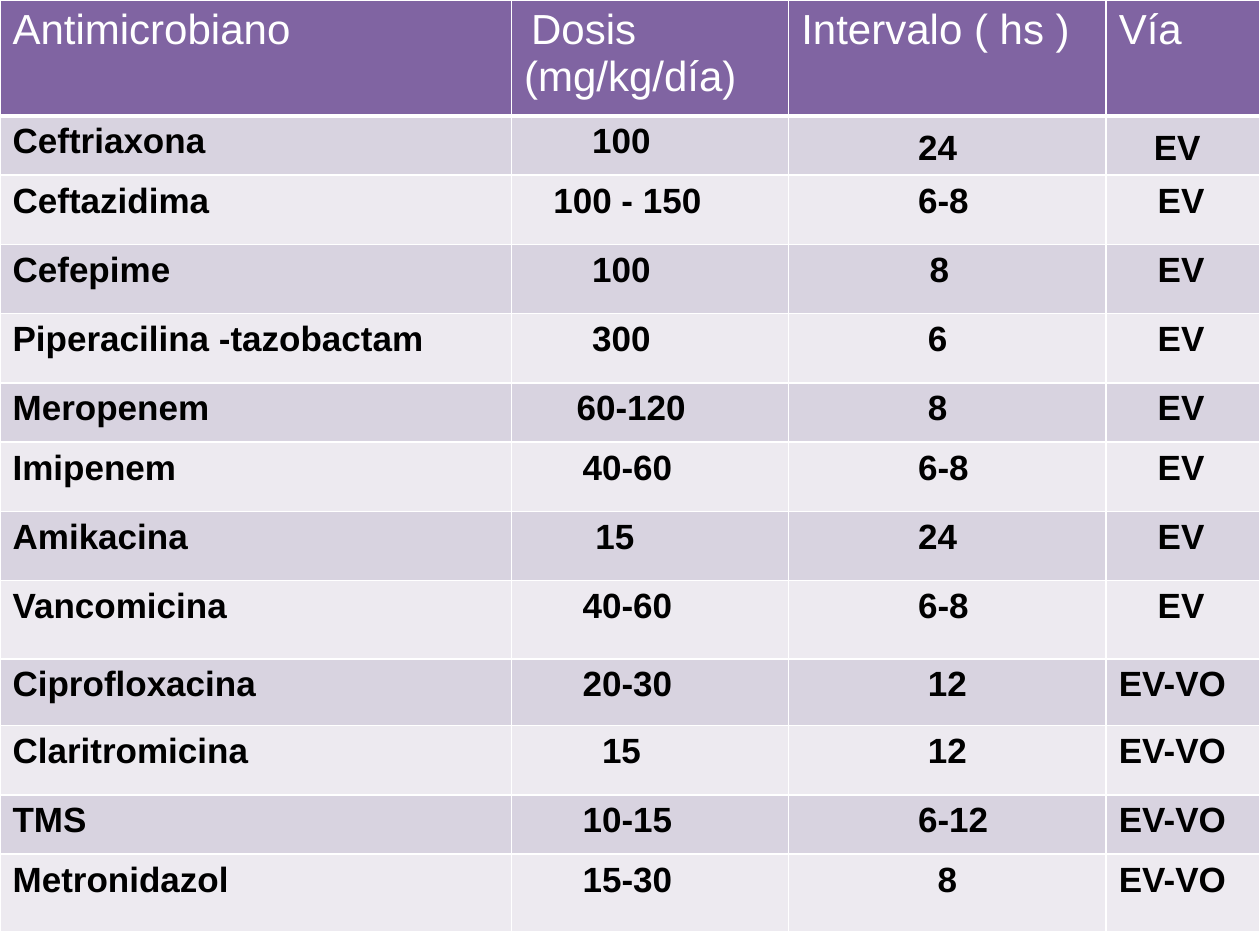
from dataclasses import dataclass

from lxml import etree
from pptx import Presentation
from pptx import util as u
from pptx.dml.color import RGBColor
from pptx.oxml import ns


@dataclass(frozen=True)
class Theme:
    font: str = "Arial"
    head_size: float = 24
    body_size: float = 20
    white: str = "FFFFFF"
    black: str = "000000"
    head_fill: str = "8064A2"
    bands: tuple = ("D8D3E0", "EDEAF0")
    line: float = 1
    head_line: float = 3


@dataclass(frozen=True)
class Entry:
    """Text of a cell, with its indent and extra top margin in points."""
    text: str
    indent: float = 0
    drop: float = 0


@dataclass(frozen=True)
class Drug:
    name: str
    dose: Entry
    interval: Entry
    route: Entry
    height: float


T = Theme()
MARGIN_TOP = 3.6
COLUMNS = (292.32, 158.4, 181.44, 87.84)
HEAD_HEIGHT = 66.24
SHORT, TALL, LAST = 33.84, 39.6, 44.64

HEADS = (
    (Entry("Antimicrobiano"),),
    (Entry("Dosis", 4), Entry("(mg/kg/día)")),
    (Entry("Intervalo ( hs )"),),
    (Entry("Vía"),),
)

EV = Entry("EV", 22.2)
EV_VO = Entry("EV-VO")
DRUGS = (
    Drug("Ceftriaxona", Entry("100", 38.9), Entry("24", 66.7, 3.6), Entry("EV", 20, 3.6), SHORT),
    Drug("Ceftazidima", Entry("100 - 150", 16.7), Entry("6-8", 66.7), EV, TALL),
    Drug("Cefepime", Entry("100", 38.9), Entry("8", 73.3), EV, TALL),
    Drug("Piperacilina -tazobactam", Entry("300", 38.9), Entry("6", 72.3), EV, TALL),
    Drug("Meropenem", Entry("60-120", 30), Entry("8", 72.3), EV, SHORT),
    Drug("Imipenem", Entry("40-60", 33.4), Entry("6-8", 66.7), EV, TALL),
    Drug("Amikacina", Entry("15", 40.7), Entry("24", 66.7), EV, TALL),
    Drug("Vancomicina", Entry("40-60", 33.4), Entry("6-8", 66.7), EV, LAST),
    Drug("Ciprofloxacina", Entry("20-30", 33.4), Entry("12", 72.3), EV_VO, 38.16),
    Drug("Claritromicina", Entry("15", 44.5), Entry("12", 72.3), EV_VO, TALL),
    Drug("TMS", Entry("10-15", 33.4), Entry("6-12", 66.7), EV_VO, SHORT),
    Drug("Metronidazol", Entry("15-30", 33.4), Entry("8", 77.8), EV_VO, LAST),
)


def write(p, text: str, *, size: float, color: str, bold: bool = False, indent: float = 0) -> None:
    """Fill a paragraph with one formatted run."""
    r = p.add_run()
    r.text = text
    r.font.name = T.font
    r.font.size = u.Pt(size)
    r.font.bold = bold
    r.font.color.rgb = RGBColor.from_string(color)
    pPr = p._p.get_or_add_pPr()
    pPr.set("marL", str(u.Pt(indent)))
    pPr.set("indent", "0")


def border(cell, **widths: float) -> None:
    """Draw white borders; the sides are named L, R, T and B, in that order."""
    tcPr = cell._tc.get_or_add_tcPr()
    for side, width in widths.items():
        ln = etree.SubElement(tcPr, ns.qn(f"a:ln{side}"), w=str(u.Pt(width)))
        fill = etree.SubElement(ln, ns.qn("a:solidFill"))
        etree.SubElement(fill, ns.qn("a:srgbClr"), val=T.white)


def fill_cell(cell, entries: tuple, *, fill: str, size: float, color: str,
              bold: bool, top: float, bottom: float) -> None:
    border(cell, L=T.line, R=T.line, T=top, B=bottom)
    cell.fill.solid()
    cell.fill.fore_color.rgb = RGBColor.from_string(fill)
    cell.margin_top = u.Pt(MARGIN_TOP + entries[0].drop)
    tf = cell.text_frame
    for i, entry in enumerate(entries):
        p = tf.add_paragraph() if i else tf.paragraphs[0]
        write(p, entry.text, size=size, color=color, bold=bold, indent=entry.indent)


def add_drug_table(s) -> None:
    heights = (HEAD_HEIGHT, *(drug.height for drug in DRUGS))
    table = s.shapes.add_table(
        len(heights), len(COLUMNS), 0, 0, u.Pt(sum(COLUMNS)), u.Pt(sum(heights))
    ).table
    table.horz_banding = False
    for column, width in zip(table.columns, COLUMNS):
        column.width = u.Pt(width)
    for row, height in zip(table.rows, heights):
        row.height = u.Pt(height)

    # Header row
    for c, entries in enumerate(HEADS):
        fill_cell(table.cell(0, c), entries, fill=T.head_fill, size=T.head_size,
                  color=T.white, bold=False, top=T.line, bottom=T.head_line)

    # One banded row for each drug
    for i, drug in enumerate(DRUGS):
        for c, entry in enumerate((Entry(drug.name), drug.dose, drug.interval, drug.route)):
            fill_cell(table.cell(i + 1, c), (entry,), fill=T.bands[i % 2], size=T.body_size,
                      color=T.black, bold=True, top=T.line, bottom=T.line)


def main() -> None:
    prs = Presentation()
    prs.slide_width, prs.slide_height = u.Pt(720), u.Pt(540)
    s = prs.slides.add_slide(prs.slide_layouts[6])
    add_drug_table(s)
    prs.save("out.pptx")


if __name__ == "__main__":
    main()
